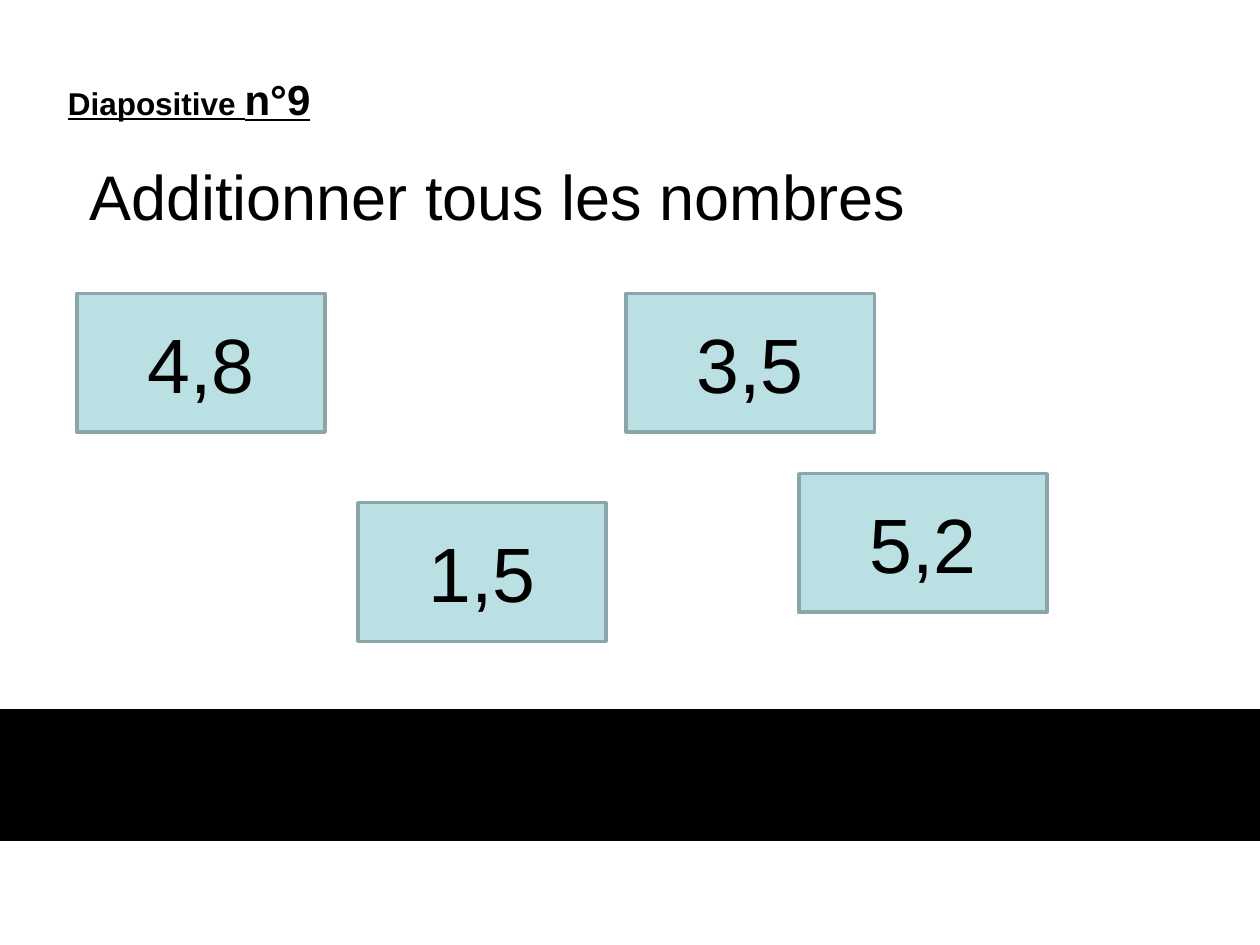
"""Build the slide on adding up decimal numbers."""
from pptx import Presentation
from pptx.dml.color import RGBColor
from pptx.enum.shapes import MSO_SHAPE
from pptx.enum.text import MSO_ANCHOR, MSO_AUTO_SIZE, PP_ALIGN
from pptx.util import Inches, Pt

RECTANGLE = MSO_SHAPE.RECTANGLE
TOP, MIDDLE = MSO_ANCHOR.TOP, MSO_ANCHOR.MIDDLE
LEFT, CENTER = PP_ALIGN.LEFT, PP_ALIGN.CENTER
GROW = MSO_AUTO_SIZE.SHAPE_TO_FIT_TEXT

COLORS = {"black": "000000", "card": "BBE0E3", "card_line": "8AA6A8"}
FONT = "Arial"
TITLE = "Additionner tous les nombres"
LABEL = [("Diapositive ", 18), ("n°9", 24)]
CARD_SIZE = (1.97, 1.1)
CARDS = [("4,8", 0.61, 2.33), ("3,5", 4.97, 2.33),
         ("1,5", 2.84, 3.99), ("5,2", 6.34, 3.76)]


def color(name):
    return RGBColor.from_string(COLORS[name])


def write(box, spans, align=LEFT, anchor=TOP, wrap=True, bold=False, underline=False):
    frame = box.text_frame
    frame.word_wrap = wrap
    frame.vertical_anchor = anchor
    para = frame.paragraphs[0]
    para.alignment = align
    for text, size in spans:
        span = para.add_run()
        span.text = text
        font = span.font
        font.name, font.size = FONT, Pt(size)
        font.bold, font.underline = bold, underline
        font.color.rgb = color("black")


def add_rectangle(page, bounds, fill, line):
    box = page.shapes.add_shape(RECTANGLE, *map(Inches, bounds))
    box.shadow.inherit = False
    box.fill.solid()
    box.fill.fore_color.rgb = color(fill)
    box.line.color.rgb = color(line)
    box.line.width = Pt(2)
    return box


def main():
    deck = Presentation()
    deck.slide_width, deck.slide_height = Inches(10), Inches(7.5)
    page = deck.slides.add_slide(deck.slide_layouts[5])

    title = page.shapes.title
    title.left, title.top = Inches(0.61), Inches(1.2)
    title.width, title.height = Inches(6.74), Inches(0.71)
    write(title, [(TITLE, 36)], wrap=False)
    title.text_frame.auto_size = GROW

    add_rectangle(page, (0, 5.64, 10, 1.02), "black", "black")

    label = page.shapes.add_textbox(*map(Inches, (0.44, 0.53, 4.8, 0.51)))
    write(label, LABEL, anchor=MIDDLE, bold=True, underline=True)

    for number, left, top in CARDS:
        card = add_rectangle(page, (left, top, *CARD_SIZE), "card", "card_line")
        write(card, [(number, 44)], align=CENTER, anchor=MIDDLE)

    deck.save("out.pptx")


if __name__ == "__main__":
    main()
